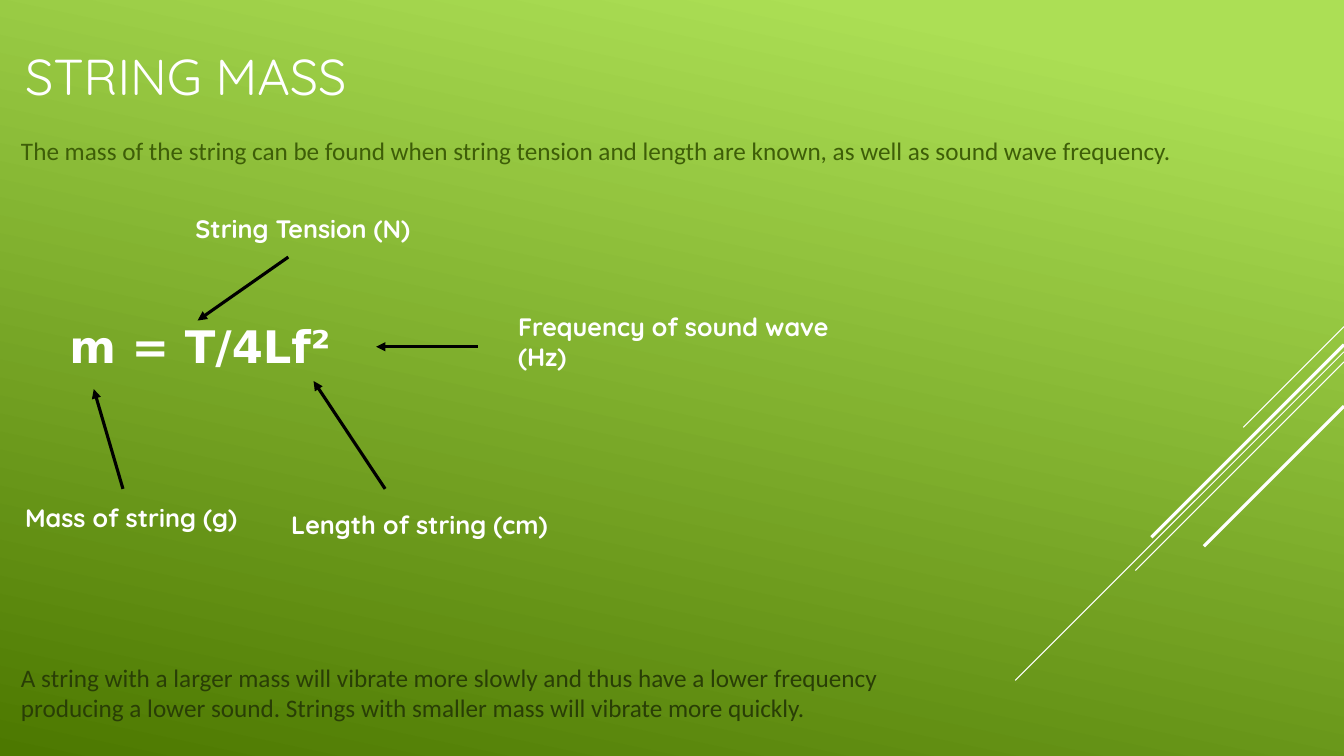
from lxml.etree import SubElement
from pptx import Presentation
from pptx.dml.color import RGBColor
from pptx.enum.shapes import MSO_CONNECTOR
from pptx.enum.text import MSO_ANCHOR
from pptx.oxml.ns import qn
from pptx.util import Inches, Pt

WHITE = "FFFFFF"
EDGE = 13.33


def paint(color, value):
    color.rgb = RGBColor.from_string(value)


def add_back(slide):
    fill = slide.background.fill
    fill.gradient()
    fill.gradient_angle = 258
    stops = ((0.1, "ACDF55"), (1, "4C7800"))
    for stop, (place, value) in zip(fill.gradient_stops, stops):
        stop.position = place
        paint(stop.color, value)


def add_text(slide, text, box, size=18, font="Quicksand", color=WHITE,
             bold=False, anchor=MSO_ANCHOR.TOP):
    frame = slide.shapes.add_textbox(*map(Inches, box)).text_frame
    frame.word_wrap = True
    frame.vertical_anchor = anchor
    run = frame.paragraphs[0].add_run()
    run.text = text
    run.font.size = Pt(size)
    run.font.name = font
    run.font.bold = bold
    paint(run.font.color, color)


def add_line(slide, start, end, color, width, arrow=False):
    line = slide.shapes.add_connector(
        MSO_CONNECTOR.STRAIGHT, *map(Inches, (*start, *end)))
    paint(line.line.color, color)
    line.line.width = Pt(width)
    if arrow:
        SubElement(line.line._get_or_add_ln(), qn("a:tailEnd"), type="triangle")
    SubElement(line._element.spPr, qn("a:effectLst"))


def add_rays(slide):
    """Draw the 45-degree lines that run down from the right edge."""
    rays = ((3.24, 1, 0.75), (3.49, 3.26, 0.75), (3.59, 2.07, 0.75),
            (3.42, 1.91, 2.25), (4.03, 1.39, 2.25))
    for top, reach, width in rays:
        add_line(slide, (EDGE, top), (EDGE - reach, top + reach), WHITE, width)


def add_formula(slide):
    add_text(slide, "m = T/4Lf²", (0.59, 3.11, 6.77, 0.64), 32,
             "DejaVu Sans", bold=True)
    labels = (
        ("String Tension (N)", (1.84, 2.07, 2.54, 0.4), (2.86, 2.55), (1.96, 3.18)),
        ("Frequency of sound wave (Hz)", (5.04, 3.04, 3.54, 0.71),
         (4.74, 3.44), (3.73, 3.44)),
        ("Length of string (cm)", (2.79, 5, 3.54, 0.4), (3.82, 4.85), (3.11, 3.78)),
        ("Mass of string (g)", (0.15, 4.93, 3.54, 0.4), (1.22, 4.85), (0.93, 3.86)),
    )
    for text, box, start, end in labels:
        add_text(slide, text, box, bold=True)
        add_line(slide, start, end, "000000", 2.25, arrow=True)


def main():
    deck = Presentation()
    deck.slide_width, deck.slide_height = Inches(EDGE), Inches(7.5)
    slide = deck.slides.add_slide(deck.slide_layouts[6])
    add_back(slide)
    add_rays(slide)
    middle = MSO_ANCHOR.MIDDLE
    add_text(slide, "STRING MASS", (0.15, 0.16, 13, 1.17), 36, anchor=middle)
    add_text(slide, "The mass of the string can be found when string tension "
             "and length are known, as well as sound wave frequency.",
             (0.11, 0.85, 13.11, 1.28), font="Calibri", color="3E5E08",
             anchor=middle)
    add_formula(slide)
    add_text(slide, "A string with a larger mass will vibrate more slowly and "
             "thus have a lower frequency producing a lower sound. Strings "
             "with smaller mass will vibrate more quickly.",
             (0.11, 6.24, 8.89, 1.26), font="Calibri", color="293E06",
             anchor=middle)
    deck.save("out.pptx")


if __name__ == "__main__":
    main()
